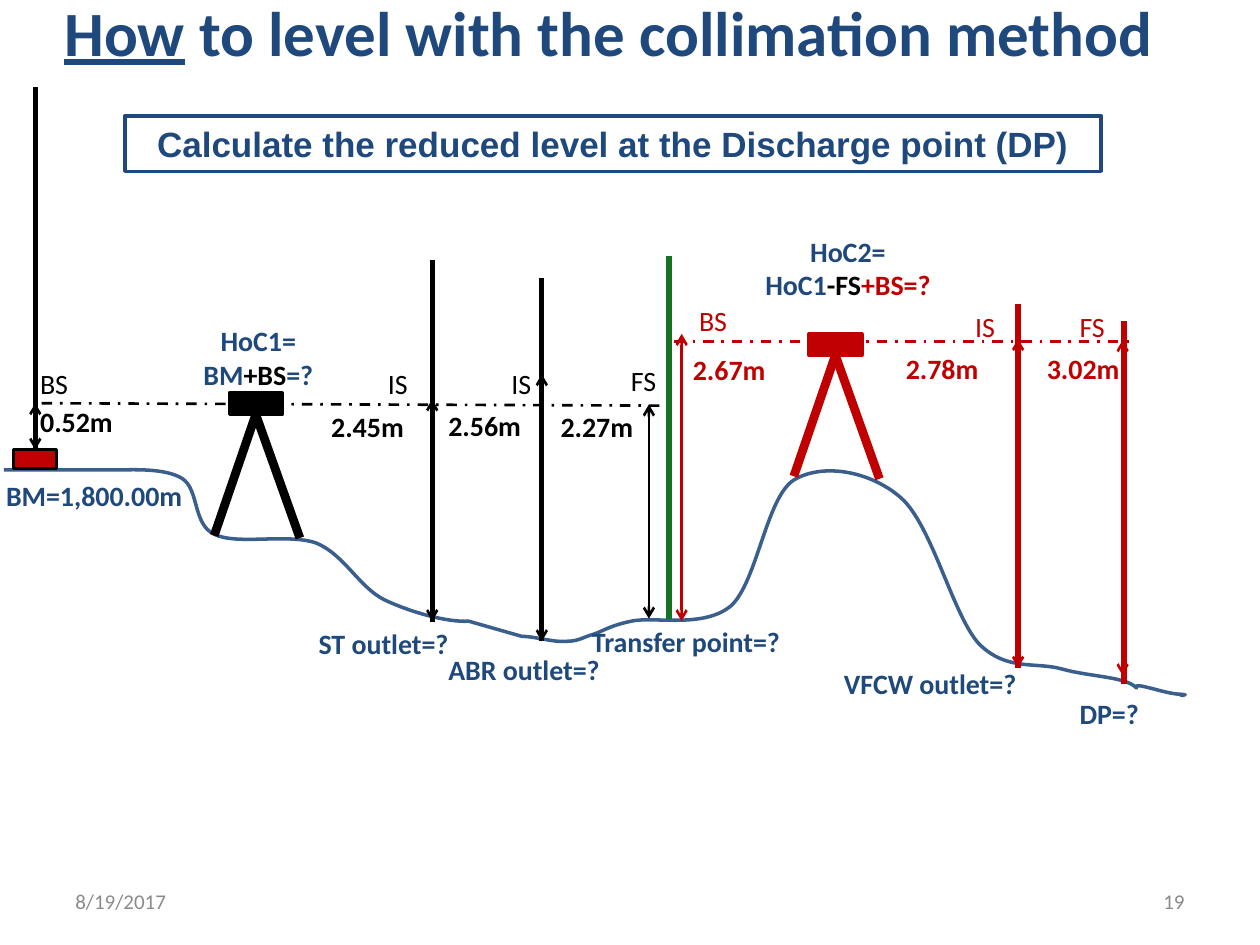
from lxml.etree import SubElement
from pptx import Presentation
from pptx.dml.color import RGBColor
from pptx.enum.dml import MSO_LINE
from pptx.enum.shapes import MSO_CONNECTOR, MSO_SHAPE
from pptx.enum.text import MSO_ANCHOR, PP_ALIGN
from pptx.oxml.ns import qn
from pptx.util import Inches, Pt

NAVY = RGBColor(0x1F, 0x49, 0x7D)
BLACK = RGBColor(0, 0, 0)
RED = RGBColor(0xC0, 0, 0)
GREEN = RGBColor(0x18, 0x72, 0x23)
GROUND = RGBColor(0x3A, 0x5F, 0x8C)
GREY = RGBColor(0x8B, 0x8B, 0x8B)

GROUND_START = (0.03, 3.73)
GROUND_SEGMENTS = [
    [(0.9, 3.73)],
    [(1.04, 3.73), (1.31, 3.71), (1.45, 3.8)],
    [(1.58, 3.89), (1.53, 4.16), (1.7, 4.24)],
    [(1.88, 4.33), (2.28, 4.23), (2.51, 4.31)],
    [(2.73, 4.4), (2.85, 4.66), (3.05, 4.76)],
    [(3.26, 4.86), (3.55, 4.94), (3.72, 4.93)],
    [(4.14, 5.05)],
    [(4.24, 5.05), (4.4, 5.1), (4.49, 5.09)],
    [(4.58, 5.09), (4.6, 5.07), (4.69, 5.04)],
    [(4.77, 5.02), (4.82, 4.97), (5.01, 4.93)],
    [(5.19, 4.89), (5.58, 4.99), (5.8, 4.81)],
    [(6.01, 4.62), (6.08, 3.95), (6.3, 3.81)],
    [(6.53, 3.67), (6.91, 3.74), (7.15, 3.95)],
    [(7.4, 4.17), (7.56, 4.88), (7.77, 5.11)],
    [(7.99, 5.33), (8.22, 5.25), (8.43, 5.31)],
    [(8.64, 5.37), (8.94, 5.37), (9.02, 5.46)],
    [(8.98, 5.4), (9.25, 5.51), (9.37, 5.51)],
    [(9.48, 5.52), (9.3, 5.51), (9.4, 5.52)],
]
STAFFS = [
    (3.43, 2.06, 4.94, BLACK), (4.3, 2.21, 5.09, BLACK), (5.31, 2.03, 4.91, GREEN),
    (8.08, 2.41, 5.3, RED), (8.92, 2.55, 5.43, RED),
]
READINGS = [
    (3.43, 3.17, 4.93, BLACK), (4.3, 2.97, 5.09, BLACK), (5.15, 3.21, 4.91, BLACK),
    (5.41, 2.65, 4.93, RED), (8.08, 2.69, 5.3, RED), (8.91, 2.7, 5.36, RED),
]
SIGHT_LABELS = [
    ("BS", 0.22, 2.86, BLACK), ("IS", 2.98, 2.86, BLACK), ("IS", 3.96, 2.86, BLACK),
    ("FS", 4.91, 2.84, BLACK), ("BS", 5.45, 2.36, RED), ("IS", 7.64, 2.41, RED),
    ("FS", 8.47, 2.41, RED),
]
VALUE_LABELS = [
    ("0.52m", 0.22, 3.16, BLACK), ("2.45m", 2.53, 3.2, BLACK), ("2.56m", 3.46, 3.19, BLACK),
    ("2.27m", 4.35, 3.2, BLACK), ("2.67m", 5.4, 2.75, RED), ("2.78m", 7.09, 2.74, RED),
    ("3.02m", 8.21, 2.74, RED),
]
POINT_LABELS = [
    ("BM=1,800.00m", -0.05, 3.75), ("ST outlet=?", 2.43, 4.92), ("ABR outlet=?", 3.46, 5.13),
    ("Transfer point=?", 4.6, 4.91), ("VFCW outlet=?", 6.6, 5.24), ("DP=?", 8.47, 5.48),
]


def add_span(para, text, color, size=16, bold=True, font="Calibri"):
    """Append one formatted run to a paragraph and return it."""
    span = para.add_run()
    span.text = text
    span.font.name = font
    span.font.size = Pt(size)
    span.font.bold = bold
    span.font.color.rgb = color
    return span


def add_text(slide, frame, lines, align=PP_ALIGN.LEFT, anchor=MSO_ANCHOR.TOP, **style):
    """Add a wrapping text box whose lines are lists of (text, color) runs."""
    box = slide.shapes.add_textbox(*map(Inches, frame))
    box.text_frame.word_wrap = True
    box.text_frame.vertical_anchor = anchor
    for index, spans in enumerate(lines):
        para = box.text_frame.add_paragraph() if index else box.text_frame.paragraphs[0]
        para.alignment = align
        for text, color in spans:
            add_span(para, text, color, **style)


def add_line(shapes, start, end, color, width, dash=None, arrows=False):
    """Add a straight line, dashed or with open arrowheads if wanted."""
    line = shapes.add_connector(MSO_CONNECTOR.STRAIGHT, *map(Inches, start + end))
    line.line.color.rgb = color
    line.line.width = Pt(width)
    if dash:
        line.line.dash_style = dash
    if arrows:
        outline = line.line._get_or_add_ln()
        for name in ("a:headEnd", "a:tailEnd"):
            SubElement(outline, qn(name), type="arrow")
    SubElement(line._element.spPr, qn("a:effectLst"))
    return line


def add_rectangle(shapes, frame, fill, outline, width):
    """Add a rectangle, unfilled when fill is None."""
    box = shapes.add_shape(MSO_SHAPE.RECTANGLE, *map(Inches, frame))
    box.shadow.inherit = False
    if fill is None:
        box.fill.background()
    else:
        box.fill.solid()
        box.fill.fore_color.rgb = fill
    box.line.color.rgb = outline
    box.line.width = Pt(width)
    return box


def add_ground(slide):
    """Draw the terrain, turning each three-point segment into a Bezier curve."""
    builder = slide.shapes.build_freeform(*map(Inches, GROUND_START), scale=1.0)
    points = [tuple(map(Inches, point)) for segment in GROUND_SEGMENTS for point in segment]
    builder.add_line_segments(points, close=False)
    ground = builder.convert_to_shape()
    steps = iter(list(ground._element.iter(qn("a:lnTo"))))
    for segment in GROUND_SEGMENTS:
        parts = [next(steps) for _ in segment]
        if len(parts) == 3:
            curve = parts[0].makeelement(qn("a:cubicBezTo"), {})
            parts[0].addprevious(curve)
            for part in parts:
                curve.append(part[0])
                part.getparent().remove(part)
    ground.fill.background()
    ground.line.color.rgb = GROUND
    ground.line.width = Pt(2)
    ground.shadow.inherit = False


def add_level(slide, left, top, color):
    """Add a levelling instrument on two legs as one group."""
    level = slide.shapes.add_group_shape().shapes
    head = add_rectangle(level, (left, top, 0.42, 0.17), color, color, 2)
    hinge = (left + 0.21, top + 0.17)
    for foot_x, foot_y in ((0.56, 1.15), (-0.12, 1.13)):
        leg = add_line(level, hinge, (left + foot_x, top + foot_y), color, 5)
        leg.begin_connect(head, 2)


def add_staffs(slide):
    """Add the benchmark, sight lines, staffs and staff readings."""
    shapes = slide.shapes
    benchmark = add_rectangle(shapes, (0.11, 3.57, 0.34, 0.15), RED, BLACK, 1.75)
    add_line(shapes, (0.33, 3.2), (5.35, 3.22), BLACK, 1.5, MSO_LINE.DASH_DOT)
    add_line(shapes, (5.35, 2.71), (8.98, 2.71), RED, 1.5, MSO_LINE.DASH_DOT)
    for top, width, arrows in ((0.69, 3, False), (3.2, 1.5, True)):
        line = add_line(shapes, (0.28, top), (0.28, 3.57), BLACK, width, arrows=arrows)
        line.end_connect(benchmark, 0)
    for x, top, bottom, color in STAFFS:
        add_line(shapes, (x, top), (x, bottom), color, 3)
    for x, top, bottom, color in READINGS:
        add_line(shapes, (x, top), (x, bottom), color, 1.5, arrows=True)


def add_labels(slide):
    """Add the sight, value, point and collimation height labels."""
    for text, left, top, color in SIGHT_LABELS:
        add_text(slide, (left, top, 0.5, 0.37), [[(text, color)]], bold=False)
    for text, left, top, color in VALUE_LABELS:
        add_text(slide, (left, top, 0.95, 0.37), [[(text, color)]])
    for text, left, top in POINT_LABELS:
        add_text(slide, (left, top, 1.8, 0.37), [[(text, NAVY)]])
    first_height = [[("HoC1= BM", NAVY), ("+BS", BLACK), ("=?", NAVY)]]
    second_height = [[("HoC2=", NAVY)], [("HoC1", NAVY), ("-FS", BLACK), ("+BS=?", RED)]]
    add_text(slide, (1.23, 2.52, 1.64, 0.64), first_height, PP_ALIGN.CENTER)
    add_text(slide, (5.35, 1.81, 2.76, 0.64), second_height, PP_ALIGN.CENTER)


def add_headings(slide):
    """Fill the title, the framed task and the footer."""
    title = slide.shapes.title
    title.left, title.top, title.width, title.height = map(Inches, (0.33, -0.17, 9, 0.83))
    title.text_frame.vertical_anchor = MSO_ANCHOR.MIDDLE
    para = title.text_frame.paragraphs[0]
    para.alignment = PP_ALIGN.CENTER
    add_span(para, "How", NAVY, 36).font.underline = True
    add_span(para, " to level with the collimation method", NAVY, 36)
    task = add_rectangle(slide.shapes, (0.99, 0.92, 7.75, 0.44), None, NAVY, 2)
    para = task.text_frame.paragraphs[0]
    para.alignment = PP_ALIGN.CENTER
    add_span(para, "Calculate the reduced level at the Discharge point (DP)", NAVY, 20, font="Arial")
    for text, left, align in (("8/19/2017", 0.5, PP_ALIGN.LEFT), ("19", 7.17, PP_ALIGN.RIGHT)):
        add_text(slide, (left, 6.95, 2.33, 0.4), [[(text, GREY)]], align,
                 MSO_ANCHOR.MIDDLE, size=12, bold=False)


def main():
    """Build and save the levelling slide."""
    deck = Presentation()
    deck.slide_width, deck.slide_height = Inches(10), Inches(7.5)
    page = deck.slides.add_slide(deck.slide_layouts[5])
    add_headings(page)
    add_ground(page)
    add_staffs(page)
    add_labels(page)
    add_level(page, 1.82, 3.12, BLACK)
    add_level(page, 6.42, 2.65, RED)
    deck.save("out.pptx")


if __name__ == "__main__":
    main()
